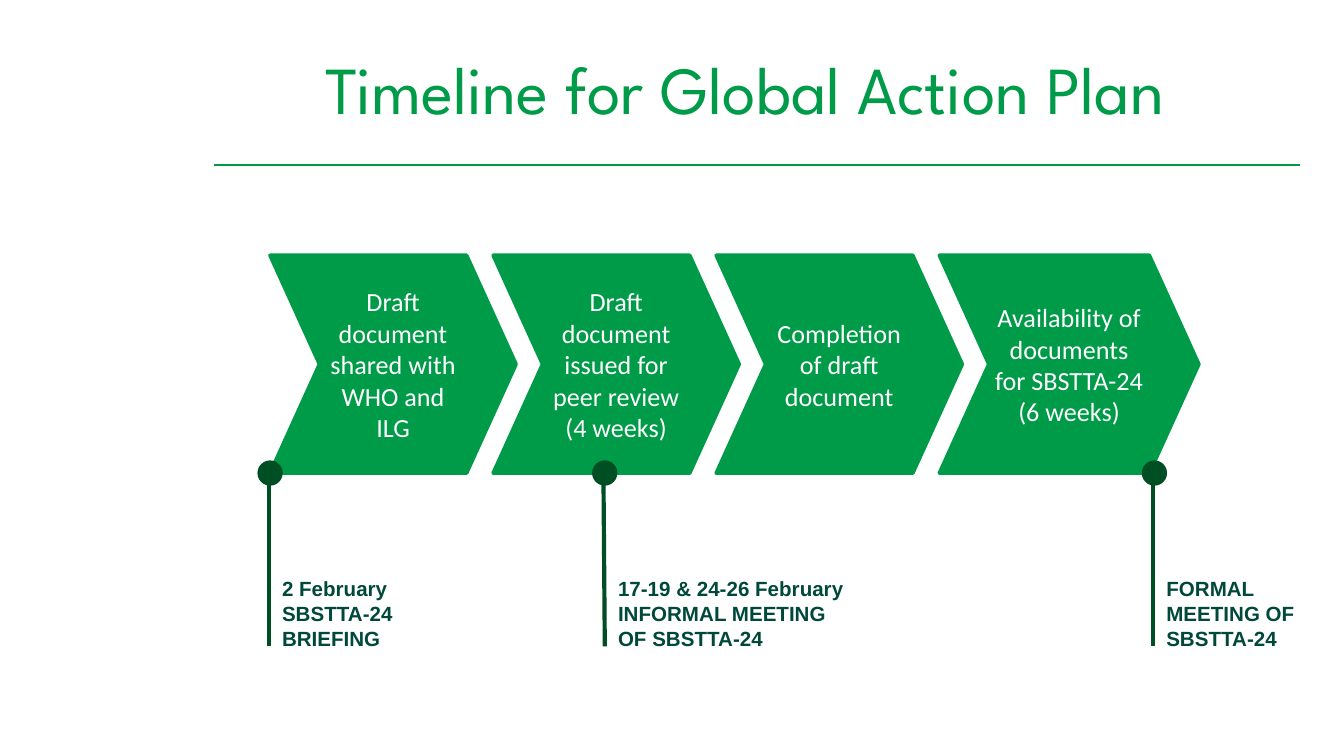
from lxml import etree
from pptx import Presentation
from pptx.dml.color import RGBColor
from pptx.enum import shapes, text
from pptx.oxml.ns import qn
from pptx.util import Inches, Pt

GREEN = RGBColor(0x00, 0x9B, 0x48)
DARK = RGBColor(0x00, 0x4E, 0x24)
TEAL = RGBColor(0x00, 0x48, 0x3A)
WHITE = RGBColor(0xFF, 0xFF, 0xFF)


def write(frame, lines, font, size, color, align, bold=False):
    frame.word_wrap = True
    for i, line in enumerate(lines):
        para = frame.paragraphs[0] if i == 0 else frame.add_paragraph()
        para.alignment = align
        run = para.add_run()
        run.text = line
        run.font.name = font
        run.font.size = Pt(size)
        run.font.bold = bold
        run.font.color.rgb = color


def rule(x1, y1, x2, y2, color, width):
    line = slide.shapes.add_connector(
        shapes.MSO_CONNECTOR.STRAIGHT, Inches(x1), Inches(y1), Inches(x2), Inches(y2))
    line.line.color.rgb = color
    line.line.width = Pt(width)
    etree.SubElement(line._element.spPr, qn("a:effectLst"))


# A 16:9 slide
deck = Presentation()
deck.slide_width = Inches(10)
deck.slide_height = Inches(10 * 9 / 16)
slide = deck.slides.add_slide(deck.slide_layouts[5])

# Title and the rule below it
title = slide.shapes.title
title.left, title.top = Inches(1.59), Inches(0.18)
title.width, title.height = Inches(7.91), Inches(0.94)
title.text_frame.vertical_anchor = text.MSO_ANCHOR.MIDDLE
write(title.text_frame, ["Timeline for Global Action Plan"],
      "League Spartan", 36, GREEN, text.PP_ALIGN.CENTER)
rule(1.59, 1.23, 9.67, 1.23, GREEN, 1)

# Steps
steps = [
    (1.83, ["Draft document shared with WHO and ILG"]),
    (1.83, ["Draft document issued for peer review", "(4 weeks)"]),
    (1.83, ["Completion of draft document"]),
    (1.93, ["Availability of documents for SBSTTA-24", "(6 weeks)"]),
]
for i, (width, lines) in enumerate(steps):
    step = slide.shapes.add_shape(
        shapes.MSO_SHAPE.CHEVRON, Inches(2.01 + i * 1.66), Inches(1.9),
        Inches(width), Inches(1.62))
    step.adjustments[0] = 0.227
    step.shadow.inherit = False
    step.fill.solid()
    step.fill.fore_color.rgb = GREEN
    step.line.color.rgb = GREEN
    step.line.width = Pt(2)
    frame = step.text_frame
    frame.margin_left = frame.margin_right = Inches(0.03)
    frame.margin_top = frame.margin_bottom = Inches(0.05)
    frame.vertical_anchor = text.MSO_ANCHOR.MIDDLE
    write(frame, lines, "Calibri", 14, WHITE, text.PP_ALIGN.CENTER)

# Meetings: stem, dot and label
meets = [
    (2, 2, 1.08, 0.66, ["2 February", "SBSTTA-24 BRIEFING"]),
    (4.49, 4.5, 1.92, 0.66, ["17-19 & 24-26 February", "INFORMAL MEETING OF SBSTTA-24"]),
    (8.58, 8.58, 1.26, 0.84, ["FORMAL MEETING OF", "SBSTTA-24"]),
]
for x, foot, width, height, lines in meets:
    rule(x, 3.52, foot, 4.81, DARK, 2.25)
    dot = slide.shapes.add_shape(
        shapes.MSO_SHAPE.OVAL, Inches(x - 0.07), Inches(3.44), Inches(0.16), Inches(0.16))
    dot.shadow.inherit = False
    dot.fill.solid()
    dot.fill.fore_color.rgb = DARK
    dot.line.color.rgb = DARK
    dot.line.width = Pt(2)
    label = slide.shapes.add_textbox(Inches(foot), Inches(4.24), Inches(width), Inches(height))
    label.text_frame.auto_size = text.MSO_AUTO_SIZE.SHAPE_TO_FIT_TEXT
    write(label.text_frame, lines, "Arial", 11, TEAL, text.PP_ALIGN.LEFT, True)

deck.save("out.pptx")
